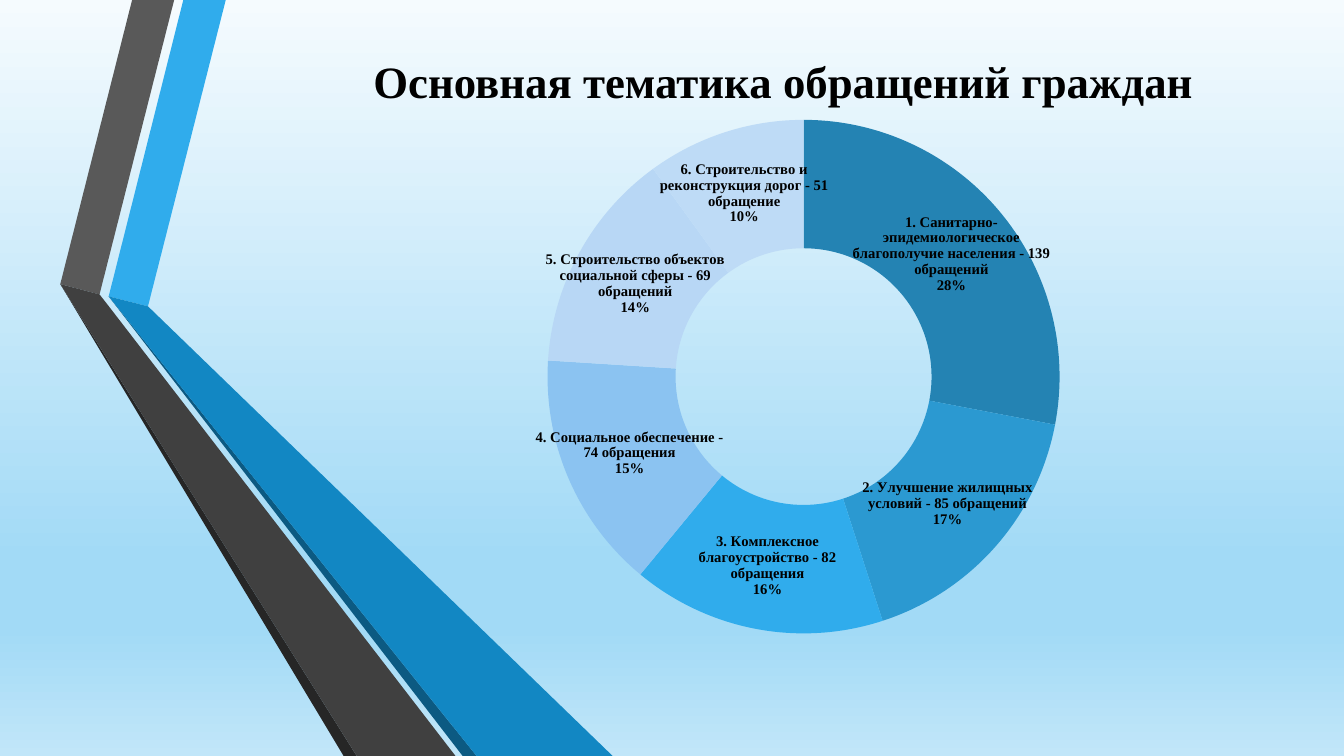
from dataclasses import dataclass

from lxml.etree import SubElement
from pptx import Presentation
from pptx.chart.data import CategoryChartData
from pptx.dml.color import RGBColor
from pptx.enum.chart import XL_CHART_TYPE
from pptx.enum.text import MSO_ANCHOR, MSO_AUTO_SIZE, PP_ALIGN
from pptx.oxml.ns import qn
from pptx.util import Cm, Pt


@dataclass(frozen=True)
class Theme:
    font: str = "Times New Roman"
    chart_font: str = "Calibri"
    text: str = "000000"
    title_size: float = 32
    label_size: float = 10.5
    chart_size: float = 10
    background: tuple = ((0, "F5FBFE"), (74, "A2DAF6"), (83, "A2DAF6"), (100, "C1E6F9"))
    sectors: tuple = ("2483B3", "2B99D1", "30ACEC", "8BC3F1", "B8D7F5", "BEDBF6")
    blue: str = "30ACEC"
    blue_lower: str = "1287C3"
    blue_edge: str = "0C5A82"
    gray: str = "595959"
    gray_lower: str = "404040"
    gray_edge: str = "262626"


theme = Theme()


def format_font(font, name, size, color, bold=False):
    font.name = name
    font.size = Pt(size)
    font.color.rgb = RGBColor.from_string(color)
    font.bold = bold


def write_text(text_frame, text, alignment=PP_ALIGN.LEFT, **font_format):
    paragraph = text_frame.paragraphs[0]
    paragraph.alignment = alignment
    run = paragraph.add_run()
    run.text = text
    format_font(run.font, **font_format)


presentation = Presentation()
presentation.slide_width = Cm(33.87)
presentation.slide_height = Cm(19.05)
slide = presentation.slides.add_slide(presentation.slide_layouts[5])

background_fill = slide.background.fill
background_fill.gradient()
background_fill.gradient_angle = 270
stop_list = slide.background._cSld.find(".//" + qn("a:gsLst"))
for stop in list(stop_list):
    stop_list.remove(stop)
for position, color in theme.background:
    stop = SubElement(stop_list, qn("a:gs"), pos=str(position * 1000))
    SubElement(stop, qn("a:srgbClr"), val=color)

ribbons = [
    (theme.blue, [(2.74, 7.47), (3.73, 7.72), (5.69, 0), (4.62, 0)]),
    (theme.gray, [(2.51, 7.42), (4.39, 0), (3.33, 0), (1.52, 7.16)]),
    (theme.gray_edge, [(1.52, 7.16), (8.66, 19.05), (8.99, 19.05)]),
    (theme.blue_edge, [(12.01, 19.05), (2.74, 7.47), (11.66, 19.05)]),
    (theme.blue_lower, [(2.74, 7.47), (12.01, 19.05), (15.44, 19.05), (3.73, 7.72)]),
    (theme.gray_lower, [(11.48, 19.05), (2.69, 7.65), (2.51, 7.42), (1.52, 7.16), (8.99, 19.05)]),
]
for color, corners in ribbons:
    points = [(Cm(x), Cm(y)) for x, y in corners]
    builder = slide.shapes.build_freeform(*points[0])
    builder.add_line_segments(points[1:], close=True)
    shape = builder.convert_to_shape()
    shape.shadow.inherit = False
    shape.fill.solid()
    shape.fill.fore_color.rgb = RGBColor.from_string(color)
    shape.line.fill.background()

title = slide.shapes.title
title.left, title.top, title.width, title.height = Cm(5.61), Cm(1.22), Cm(28.26), Cm(1.63)
title.text_frame.word_wrap = True
title.text_frame.auto_size = MSO_AUTO_SIZE.NONE
title.text_frame.vertical_anchor = MSO_ANCHOR.MIDDLE
write_text(title.text_frame, "Основная тематика обращений граждан", alignment=PP_ALIGN.CENTER,
           name=theme.font, size=theme.title_size, color=theme.text, bold=True)

topics = [
    ("1. Санитарно-эпидемиологическое благополучие населения - 139 обращений", 28),
    ("2. Улучшение жилищных условий - 85 обращений", 17),
    ("3. Комплексное благоустройство - 82 обращения", 16),
    ("4. Социальное обеспечение - 74 обращения", 15),
    ("5. Строительство объектов социальной сферы - 69 обращений", 14),
    ("6. Строительство и реконструкция дорог - 51 обращение", 10),
]
chart_data = CategoryChartData()
chart_data.categories = [topic for topic, share in topics]
chart_data.add_series("Series 1", [share for topic, share in topics])
chart = slide.shapes.add_chart(XL_CHART_TYPE.DOUGHNUT, Cm(13.44), Cm(2.59), Cm(20.22), Cm(14.38),
                               chart_data).chart
chart.has_title = False
chart.has_legend = False
format_font(chart.font, theme.chart_font, theme.chart_size, theme.text)

plot = chart.plots[0]
plot.vary_by_categories = True
series = plot.series[0]
for index, color in enumerate(theme.sectors):
    sector = series.points[index].format
    sector.fill.solid()
    sector.fill.fore_color.rgb = RGBColor.from_string(color)
    sector.line.fill.background()

labels = series.data_labels
labels.show_category_name = True
labels.show_percentage = True
labels.show_value = False
format_font(labels.font, theme.font, theme.label_size, theme.text, bold=True)
separator = SubElement(labels._element, qn("c:separator"))
separator.text = "\n"
labels._element.find(qn("c:showBubbleSize")).addnext(separator)

plot._element.find(qn("c:holeSize")).set("val", "36")
plot_area = chart._chartSpace.find(".//" + qn("c:plotArea"))
for old_layout in plot_area.findall(qn("c:layout")):
    plot_area.remove(old_layout)
layout = SubElement(plot_area, qn("c:layout"))
plot_area.insert(0, layout)
manual_layout = SubElement(layout, qn("c:manualLayout"))
for tag, value in [("layoutTarget", "inner"), ("xMode", "edge"), ("yMode", "edge"),
                   ("x", "0.01"), ("y", "0.03"), ("w", "0.65"), ("h", "0.9")]:
    SubElement(manual_layout, qn("c:" + tag), val=value)

presentation.save("out.pptx")
